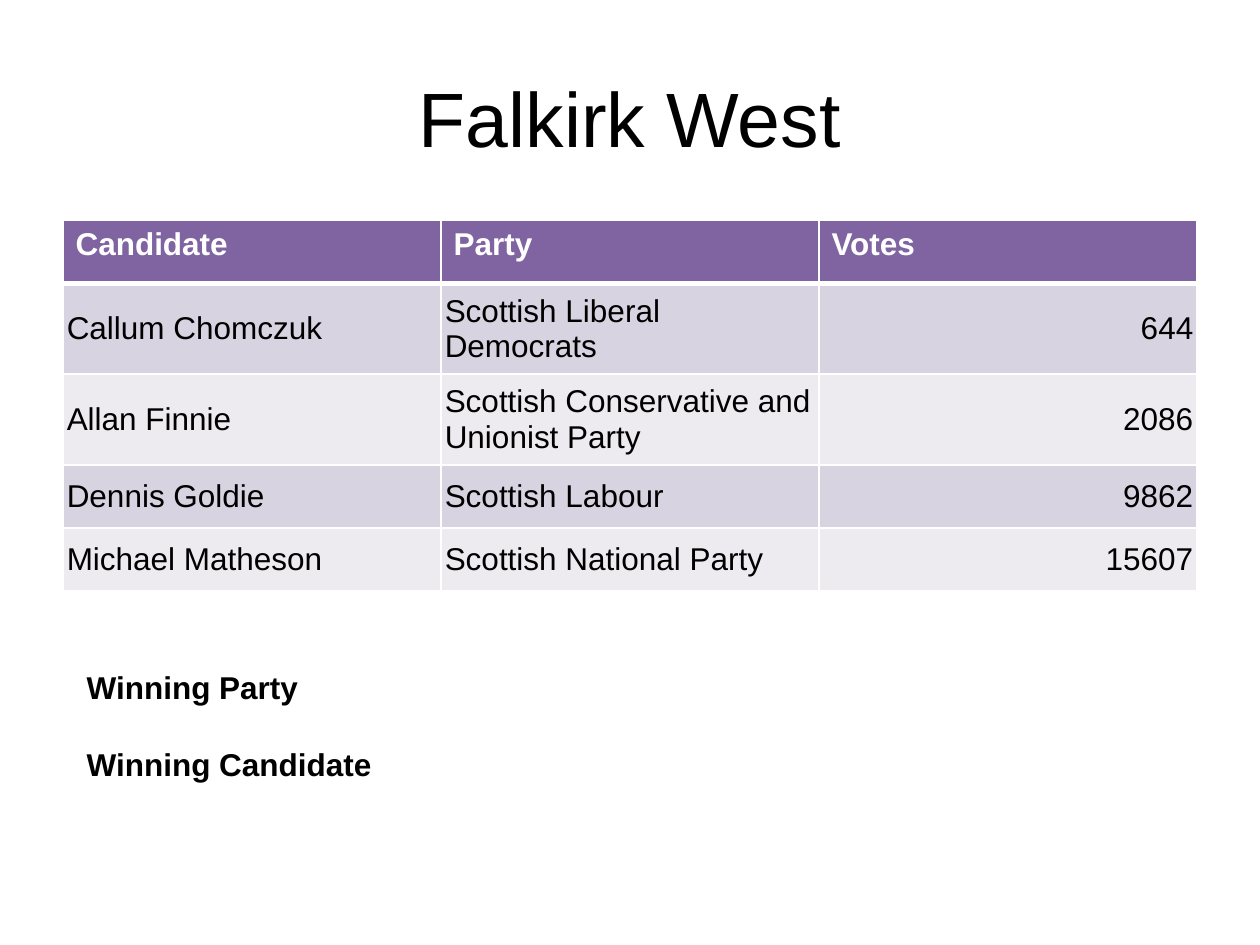
from lxml import etree
from pptx import Presentation
from pptx.dml.color import RGBColor
from pptx.enum.text import MSO_ANCHOR, PP_ALIGN
from pptx.oxml.ns import qn
from pptx.util import Inches, Pt

LEFT, CENTER, RIGHT = PP_ALIGN.LEFT, PP_ALIGN.CENTER, PP_ALIGN.RIGHT
TOP, MIDDLE = MSO_ANCHOR.TOP, MSO_ANCHOR.MIDDLE

TITLE = "Falkirk West"
HEADER = ("Candidate", "Party", "Votes")
RESULTS = [
    ("Callum Chomczuk", "Scottish Liberal Democrats", 644),
    ("Allan Finnie", "Scottish Conservative and Unionist Party", 2086),
    ("Dennis Goldie", "Scottish Labour", 9862),
    ("Michael Matheson", "Scottish National Party", 15607),
]
LABELS = ("Winning Party", "Winning Candidate")

THEME = {
    "font": "Arial", "title": 44, "body": 18,
    "text": "000000", "light": "FFFFFF", "head": "8064A2",
    "bands": ("D8D3E0", "EDEAF0"),
}
W, H = 10, 7.5
MARGIN = W * 0.05
ROW_H = 0.5
LABEL_GAP = 22.5


def add_run(p, text, size, color, bold=False):
    r = p.add_run()
    r.text = text
    r.font.name = THEME["font"]
    r.font.size = Pt(size)
    r.font.bold = bold
    r.font.color.rgb = RGBColor.from_string(color)


def add_text(slide, box, lines, size, bold=False, align=LEFT, anchor=TOP, gap=0):
    tf = slide.shapes.add_textbox(*map(Inches, box)).text_frame
    tf.word_wrap = True
    tf.vertical_anchor = anchor
    for i, line in enumerate(lines):
        p = tf.add_paragraph() if i else tf.paragraphs[0]
        p.alignment = align
        p.space_before = Pt(gap if i else 0)
        add_run(p, line, size, THEME["text"], bold)


def set_borders(cell, widths):
    tcPr = cell._tc.get_or_add_tcPr()
    for i, (side, width) in enumerate(zip("LRTB", widths)):
        ln = etree.Element(qn(f"a:ln{side}"), w=str(Pt(width)))
        fill = etree.SubElement(ln, qn("a:solidFill"))
        etree.SubElement(fill, qn("a:srgbClr"), val=THEME["light"])
        tcPr.insert(i, ln)


def fill_cell(cell, value, row):
    head = row == 0
    color = THEME["head"] if head else THEME["bands"][(row - 1) % 2]
    cell.fill.solid()
    cell.fill.fore_color.rgb = RGBColor.from_string(color)
    if not head:
        cell.vertical_anchor = MIDDLE
        cell.margin_left = cell.margin_right = Inches(0.03)
        cell.margin_top = cell.margin_bottom = Inches(0.06)
    p = cell.text_frame.paragraphs[0]
    p.alignment = RIGHT if isinstance(value, int) else LEFT
    add_run(p, str(value), THEME["body"], THEME["light" if head else "text"], head)
    set_borders(cell, (1, 1, 3 if row == 1 else 1, 3 if head else 1))


def add_results(slide, left, top, width):
    rows = [HEADER, *RESULTS]
    box = map(Inches, (left, top, width, ROW_H * len(rows)))
    table = slide.shapes.add_table(len(rows), len(HEADER), *box).table
    for col in table.columns:
        col.width = Inches(width / len(HEADER))
    for i, values in enumerate(rows):
        table.rows[i].height = Inches(ROW_H)
        for j, value in enumerate(values):
            fill_cell(table.cell(i, j), value, i)


def main():
    prs = Presentation()
    prs.slide_width, prs.slide_height = Inches(W), Inches(H)
    slide = prs.slides.add_slide(prs.slide_layouts[6])
    inner = W - 2 * MARGIN
    add_text(slide, (MARGIN, H * 0.04, inner, H / 6), [TITLE], THEME["title"],
             align=CENTER, anchor=MIDDLE)
    add_results(slide, MARGIN, 1.75, inner)
    add_text(slide, (0.59, H * 0.7, W * 0.85, 1.01), LABELS, THEME["body"],
             bold=True, gap=LABEL_GAP)
    prs.save("out.pptx")


if __name__ == "__main__":
    main()
